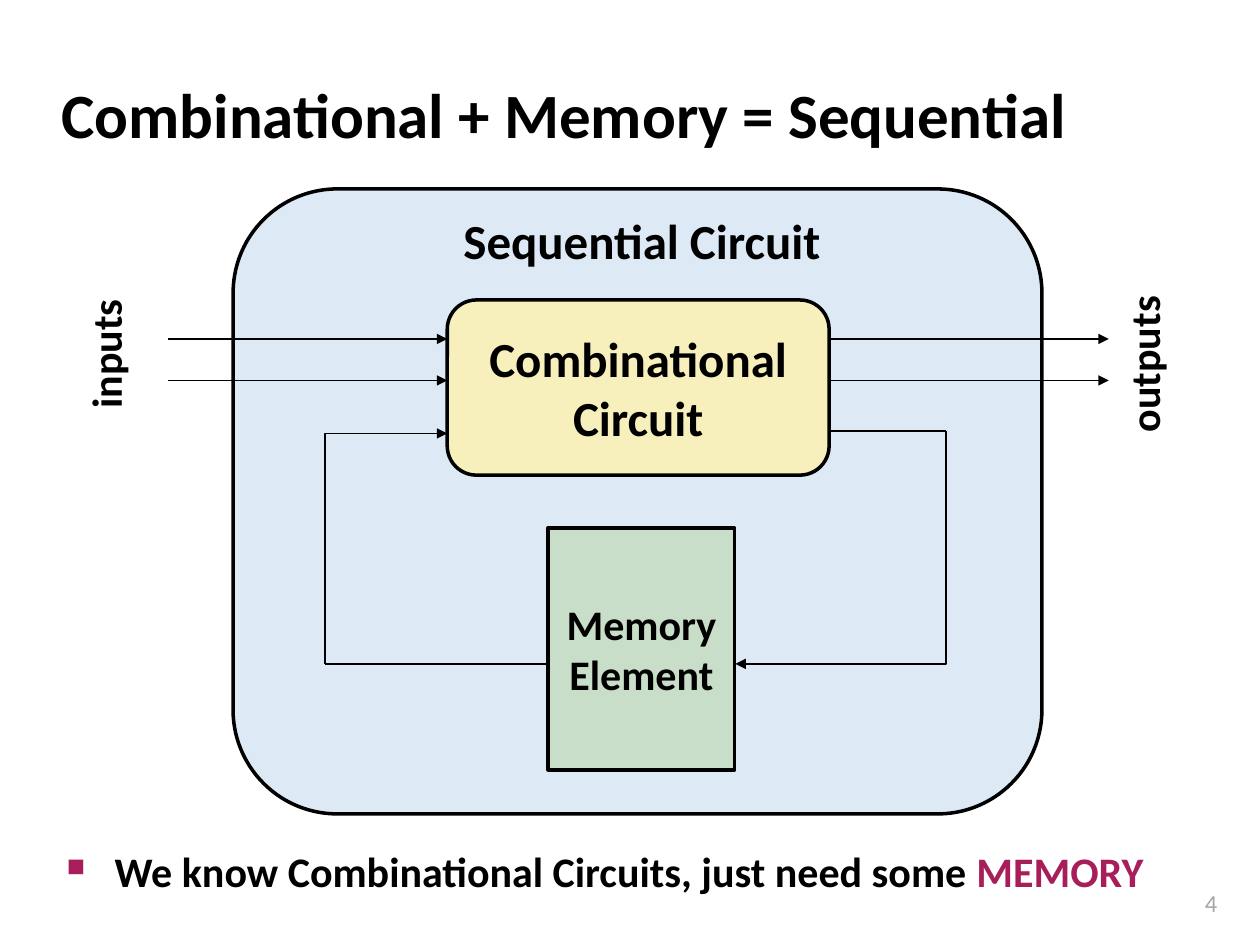
import pptx
import pptx.dml.color
import pptx.enum.shapes
import pptx.enum.text
import pptx.oxml
import pptx.oxml.ns
import pptx.util

Pt = pptx.util.Pt
RGB = pptx.dml.color.RGBColor.from_string
SHAPE = pptx.enum.shapes.MSO_SHAPE
CONNECTOR = pptx.enum.shapes.MSO_CONNECTOR
ALIGN = pptx.enum.text.PP_ALIGN
ANCHOR = pptx.enum.text.MSO_ANCHOR
qn = pptx.oxml.ns.qn

COLORS = {
    "ink": "000000",
    "system": "DEE9F6",
    "logic": "F7F0BC",
    "memory": "C8DEC8",
    "accent": "A81E5B",
    "page_number": "A6A6A6",
}


def write(shape, text, size, align=ALIGN.CENTER, color="ink", bold=True, wrap=True):
    """Set the shape's text and format every run alike."""
    frame = shape.text_frame
    frame.text = text
    frame.word_wrap = wrap
    for para in frame.paragraphs:
        para.alignment = align
        for span in para.runs:
            span.font.name = "Calibri"
            span.font.size = Pt(size)
            span.font.bold = bold
            span.font.color.rgb = RGB(COLORS[color])


def connect(kind, x1, y1, x2, y2, arrow=True):
    """Draw a thin black connector without shadow, with an arrowhead at its end."""
    line = page.shapes.add_connector(kind, Pt(x1), Pt(y1), Pt(x2), Pt(y2))
    line.line.color.rgb = RGB(COLORS["ink"])
    line.line.width = Pt(1)
    properties = line._element.spPr
    if arrow:
        head = pptx.oxml.parse_xml(f'<a:tailEnd {pptx.oxml.ns.nsdecls("a")} type="triangle"/>')
        properties.find(qn("a:ln")).append(head)
    properties.append(pptx.oxml.parse_xml(f'<a:effectLst {pptx.oxml.ns.nsdecls("a")}/>'))
    return line


deck = pptx.Presentation()
deck.slide_width, deck.slide_height = Pt(720), Pt(540)
page = deck.slides.add_slide(deck.slide_layouts[5])

title = page.shapes.title
title.left, title.top, title.width, title.height = Pt(28), Pt(34.6), Pt(597.6), Pt(59.8)
write(title, "Combinational + Memory = Sequential", 36, ALIGN.LEFT)
title.text_frame.vertical_anchor = ANCHOR.MIDDLE

# Circuit blocks: the system, then the two parts inside it
blocks = [
    (SHAPE.ROUNDED_RECTANGLE, 133.2, 108, 462.2, 357.1, "system", "", 28),
    (SHAPE.ROUNDED_RECTANGLE, 255.6, 171.4, 218.2, 100.1, "logic", "Combinational\nCircuit", 28),
    (SHAPE.RECTANGLE, 313.2, 301.7, 106.6, 138.2, "memory", "Memory\nElement", 24),
]
for kind, left, top, width, height, fill, text, size in blocks:
    block = page.shapes.add_shape(kind, Pt(left), Pt(top), Pt(width), Pt(height))
    block.shadow.inherit = False
    block.fill.solid()
    block.fill.fore_color.rgb = RGB(COLORS[fill])
    block.line.color.rgb = RGB(COLORS["ink"])
    block.line.width = Pt(2)
    if text:
        write(block, text, size, wrap=False)
        block.text_frame.vertical_anchor = ANCHOR.MIDDLE

# Input and output arrows
logic_left, logic_right, wire_length = 255.6, 473.8, 159.8
for y in (193.7, 217.4):
    for start in (logic_left - wire_length, logic_right):
        connect(CONNECTOR.STRAIGHT, start, y, start + wire_length, y)

# Feedback loop: stubs, then corners that run vertically and turn towards a block
memory_left, memory_right, memory_y = 313.2, 420.2, 379.4
loop_left, loop_right, state_out_y, state_in_y = 185.8, 540.7, 246.2, 247.7
connect(CONNECTOR.STRAIGHT, logic_right, state_out_y, loop_right, state_out_y, arrow=False)
connect(CONNECTOR.STRAIGHT, loop_left, memory_y, memory_left, memory_y, arrow=False)
corners = [
    (loop_right, state_out_y, memory_right, memory_y, 90),
    (loop_left, memory_y, logic_left, state_in_y, 270),
]
for x1, y1, x2, y2, angle in corners:
    middle_x, middle_y = (x1 + x2) / 2, (y1 + y2) / 2
    # The quarter turn swaps width and height
    half_width, half_height = abs(y2 - y1) / 2, abs(x2 - x1) / 2
    corner = connect(CONNECTOR.ELBOW, middle_x - half_width, middle_y - half_height,
                     middle_x + half_width, middle_y + half_height)
    properties = corner._element.spPr
    properties.find(qn("a:prstGeom")).set("prst", "bentConnector2")
    properties.find(qn("a:xfrm")).set("rot", str(angle * 60000))

# Labels
labels = [
    ("Sequential Circuit", 191.5, 116.6, 350.6, 44, 28, 0, ALIGN.CENTER, "ink", True),
    ("inputs", 15.1, 184.3, 90, 36, 24, 270, ALIGN.CENTER, "ink", True),
    ("outputs", 602.6, 190.1, 101.5, 36, 24, 270, ALIGN.CENTER, "ink", True),
    ("4", 648, 504, 54.7, 24.5, 14, 0, ALIGN.RIGHT, "page_number", False),
]
for text, left, top, width, height, size, angle, align, color, bold in labels:
    box = page.shapes.add_textbox(Pt(left), Pt(top), Pt(width), Pt(height))
    box.rotation = angle
    write(box, text, size, align, color, bold)

# Bulleted conclusion with its last word in the accent colour
conclusion = page.shapes.add_textbox(Pt(31), Pt(479.5), Pt(635), Pt(49))
write(conclusion, "We know Combinational Circuits, just need some ", 24, ALIGN.LEFT)
para = conclusion.text_frame.paragraphs[0]
keyword = para.add_run()
keyword.text = "MEMORY"
keyword.font.name = "Calibri"
keyword.font.size = Pt(24)
keyword.font.bold = True
keyword.font.color.rgb = RGB(COLORS["accent"])
bullet = para._p.get_or_add_pPr()
bullet.set("marL", str(Pt(27.4)))
bullet.set("indent", str(-Pt(27.4)))
for tag in (f'buClr {{}}><a:srgbClr val="{COLORS["accent"]}"/></a:buClr>',
            'buSzPct {} val="60000"/>',
            'buChar {} char="■"/>'):
    bullet.append(pptx.oxml.parse_xml("<a:" + tag.format(pptx.oxml.ns.nsdecls("a"))))

deck.save("out.pptx")
